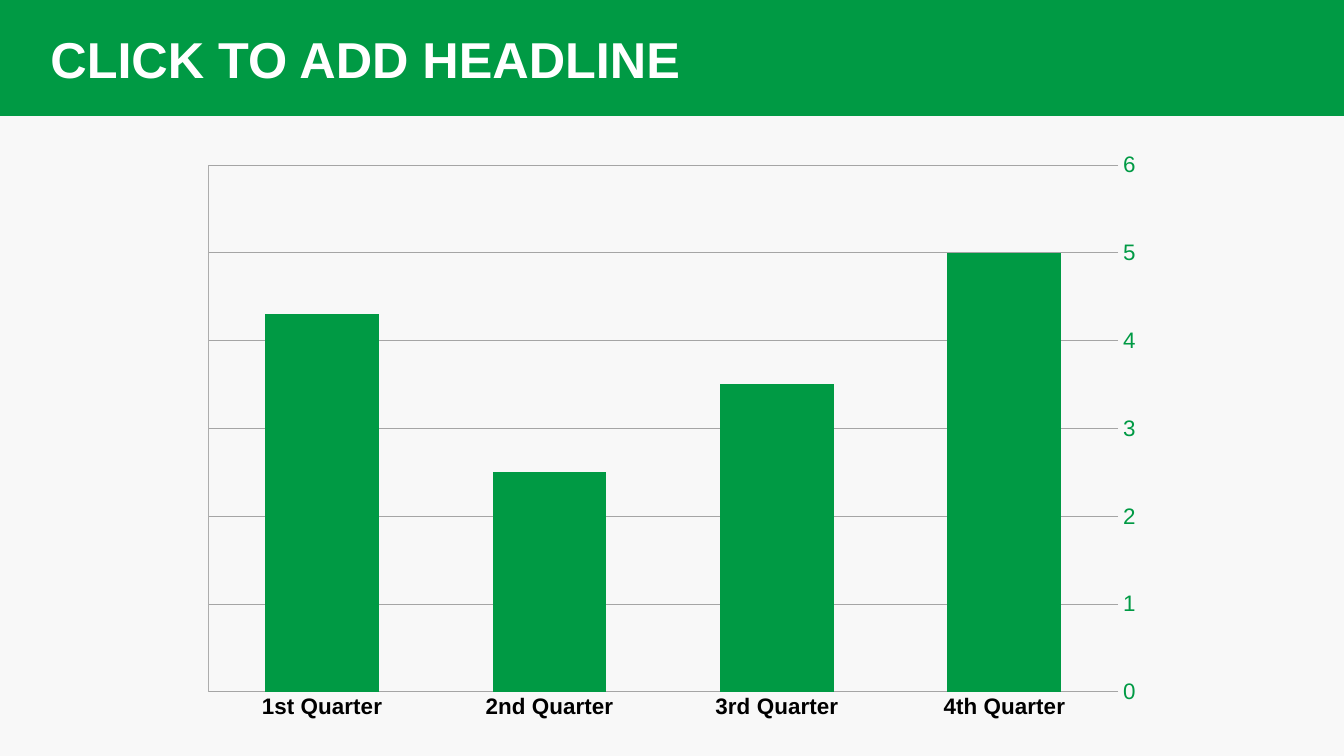
from pptx import Presentation
from pptx.chart.data import CategoryChartData
from pptx.dml.color import RGBColor
from pptx.enum.chart import XL_CHART_TYPE as CT, XL_TICK_LABEL_POSITION as TLP, XL_TICK_MARK as TM
from pptx.enum.shapes import MSO_SHAPE
from pptx.enum.text import MSO_ANCHOR, PP_ALIGN
from pptx.util import Inches, Pt

GREEN = RGBColor(0x00, 0x9A, 0x44)
WHITE = RGBColor(0xFF, 0xFF, 0xFF)
BLACK = RGBColor(0x00, 0x00, 0x00)
PAPER = RGBColor(0xF8, 0xF8, 0xF8)
GRID = RGBColor(0xA5, 0xA5, 0xA5)
AXIS = RGBColor(0xAD, 0xAD, 0xAD)

W, H = Inches(26.67), Inches(15)
COL, ROW = W / 32, H / 32


def cells(col, row, cols, rows):
    return [round(n) for n in (col * COL, row * ROW, cols * COL, rows * ROW)]


def set_font(font, size, color, bold=False):
    font.name = "Arial"
    font.size = Pt(size)
    font.bold = bold
    font.color.rgb = color


def set_line(line, color):
    line.color.rgb = color
    line.width = Pt(0.75)


def add_header(slide, box, text):
    x, y, w, h = box
    band = slide.shapes.add_shape(MSO_SHAPE.RECTANGLE, x, y, w, h)
    band.shadow.inherit = False
    band.fill.solid()
    band.fill.fore_color.rgb = GREEN
    band.line.fill.background()
    slide.shapes._spTree.insert(2, band._element)

    title = slide.shapes.title
    title.left, title.top = x + round(1.2 * COL), y + round(h * 0.27)
    title.width, title.height = round(18 * COL), round(h * 0.52)
    tf = title.text_frame
    tf.text = text
    tf.word_wrap = True
    tf.vertical_anchor = MSO_ANCHOR.BOTTOM
    tf.margin_left = 0
    tf.margin_right = Inches(0.1)
    tf.margin_top = tf.margin_bottom = Inches(0.05)
    p = tf.paragraphs[0]
    p.alignment = PP_ALIGN.LEFT
    p.line_spacing = 0.9
    set_font(p.runs[0].font, 72, WHITE, True)


def style_axis(axis, color, line_color, bold):
    axis.major_tick_mark = axis.minor_tick_mark = TM.NONE
    set_font(axis.tick_labels.font, 32, color, bold)
    set_line(axis.format.line, line_color)


def add_quarter_chart(slide, box):
    data = CategoryChartData()
    data.categories = ["1st Quarter", "2nd Quarter", "3rd Quarter", "4th Quarter"]
    data.add_series("Series 1", (4.3, 2.5, 3.5, 5))
    chart = slide.shapes.add_chart(CT.COLUMN_CLUSTERED, *box, data).chart
    chart.has_legend = False
    chart.has_title = False
    chart.font.name = "Calibri"
    chart.font.size = Pt(10)
    chart.font.color.rgb = BLACK

    plot = chart.plots[0]
    plot.gap_width = 100
    plot.overlap = -24
    plot.vary_by_categories = False
    fill = plot.series[0].format.fill
    fill.solid()
    fill.fore_color.rgb = GREEN

    style_axis(chart.category_axis, BLACK, GRID, True)
    values = chart.value_axis
    style_axis(values, GREEN, AXIS, False)
    values.tick_label_position = TLP.HIGH
    values.minimum_scale, values.maximum_scale, values.major_unit = 0, 6, 1
    values.tick_labels.number_format = "General"
    values.tick_labels.number_format_is_linked = False
    set_line(values.major_gridlines.format.line, GRID)


def main():
    prs = Presentation()
    prs.slide_width, prs.slide_height = W, H
    slide = prs.slides.add_slide(prs.slide_layouts[5])
    slide.background.fill.solid()
    slide.background.fill.fore_color.rgb = PAPER
    add_header(slide, cells(0, 0, 32, 4.91), "CLICK TO ADD HEADLINE")
    add_quarter_chart(slide, cells(4.5, 5.95, 23, 24.98))
    prs.save("out.pptx")


if __name__ == "__main__":
    main()
